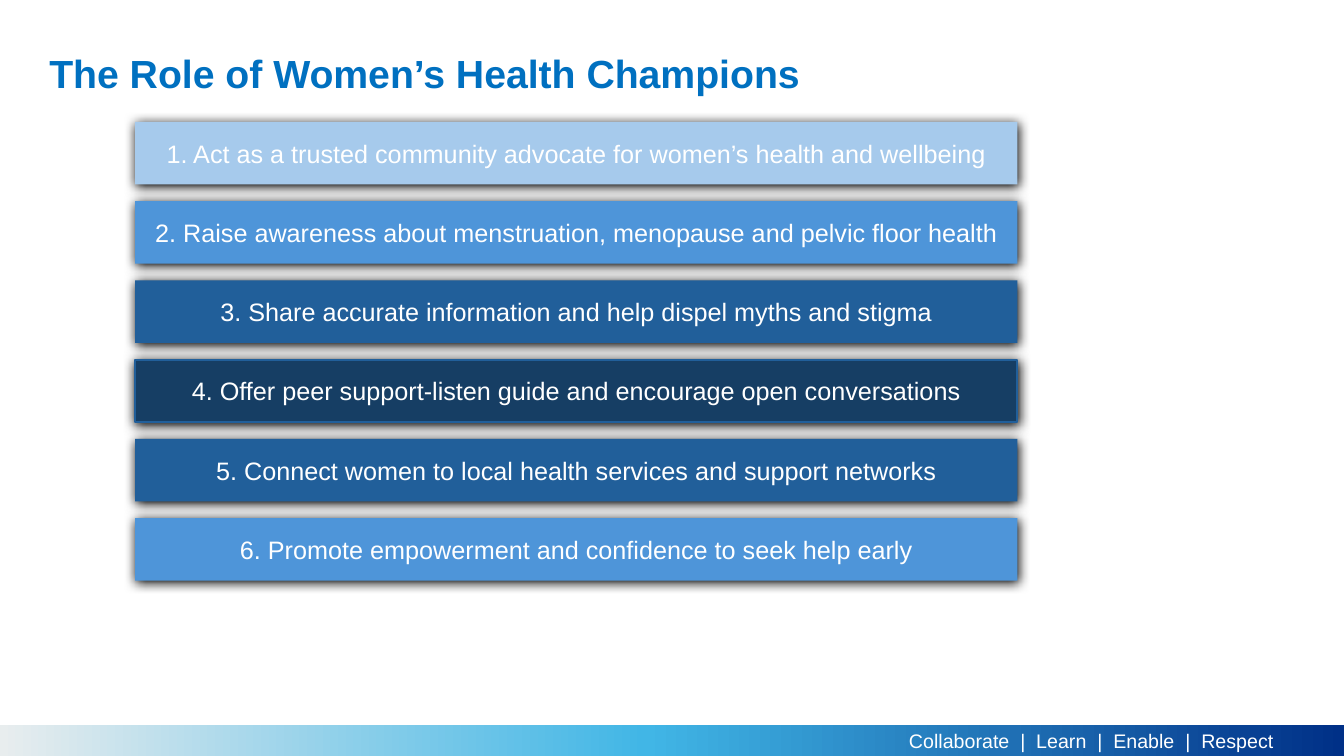
from copy import deepcopy
from dataclasses import dataclass

from lxml import etree
from pptx import Presentation
from pptx import util as u
from pptx.dml.color import RGBColor
from pptx.enum import shapes, text
from pptx.oxml.ns import qn

COLOURS = {
    "title": "0070C0", "white": "FFFFFF", "shadow": "000000",
    "pale": "A6CAEC", "mid": "4E95D9", "deep": "215F9A", "navy": "163E64",
    "band_start": "E8EDEE", "band_middle": "41B6E6", "band_end": "003087",
}
WIDTH, HEIGHT = u.Inches(13.33), u.Inches(7.5)
COLUMN, ROW = WIDTH / 100, HEIGHT / 100  # a grid of 100 columns by 100 rows
BAR_TOP, BAR_PITCH = 16.13, 10.48
BAND_STOPS = [(0, "band_start"), (48, "band_middle"), (100, "band_end")]


@dataclass
class Area:
    left: float
    top: float
    width: float
    height: float

    def lengths(self) -> list[int]:
        return [round(self.left * COLUMN), round(self.top * ROW),
                round(self.width * COLUMN), round(self.height * ROW)]


@dataclass
class Role:
    wording: str
    fill: str
    outline: str | None = None


ROLES = [
    Role("1. Act as a trusted community advocate for women’s health and wellbeing", "pale"),
    Role("2. Raise awareness about menstruation, menopause and pelvic floor health", "mid"),
    Role("3. Share accurate information and help dispel myths and stigma", "deep"),
    Role("4. Offer peer support-listen guide and encourage open conversations", "navy", "deep"),
    Role("5. Connect women to local health services and support networks", "deep"),
    Role("6. Promote empowerment and confidence to seek help early", "mid"),
]


def colour(name: str) -> RGBColor:
    return RGBColor.from_string(COLOURS[name])


def write(box, wording: str, ink: str, font: dict, frame: dict, paragraph: dict) -> None:
    para = box.text_frame.paragraphs[0]
    span = para.add_run()
    span.text = wording
    span.font.color.rgb = colour(ink)
    formats = [(span.font, {"name": "Arial", **font}),
               (box.text_frame, {"word_wrap": True, **frame}),
               (para, paragraph)]
    for target, values in formats:
        for key, value in values.items():
            setattr(target, key, value)


def add_rectangle(page, area: Area):
    box = page.shapes.add_shape(shapes.MSO_SHAPE.RECTANGLE, *area.lengths())
    box.shadow.inherit = False
    box.line.fill.background()
    return box


def add_shadow(box) -> None:
    effects = box._element.spPr.find(qn("a:effectLst"))
    shadow = etree.SubElement(effects, qn("a:outerShdw"), {
        "blurRad": str(u.Pt(8.5)), "dist": str(u.Pt(1)),
        "dir": "5400000", "algn": "t", "rotWithShape": "0"})
    etree.SubElement(shadow, qn("a:srgbClr"), val=COLOURS["shadow"])


def add_band(page, area: Area) -> None:
    band = add_rectangle(page, area)
    band.fill.gradient()
    band.fill.gradient_angle = 0
    stop_list = next(band._element.spPr.iter(qn("a:gsLst")))
    stop_list.insert(1, deepcopy(stop_list[0]))
    for stop, (position, name) in zip(band.fill.gradient_stops, BAND_STOPS):
        stop.position = position / 100
        stop.color.rgb = colour(name)


def add_role(page, index: int, role: Role) -> None:
    bar = add_rectangle(page, Area(10.05, BAR_TOP + index * BAR_PITCH, 65.64, 8.27))
    bar.fill.solid()
    bar.fill.fore_color.rgb = colour(role.fill)
    if role.outline:
        bar.line.color.rgb = colour(role.outline)
        bar.line.width = u.Pt(1.5)
    add_shadow(bar)
    write(bar, role.wording, "white", {"size": u.Pt(18)},
          {"vertical_anchor": text.MSO_ANCHOR.MIDDLE},
          {"alignment": text.PP_ALIGN.CENTER})


def main() -> None:
    deck = Presentation()
    deck.slide_width, deck.slide_height = WIDTH, HEIGHT
    page = deck.slides.add_slide(deck.slide_layouts[6])

    # Footer band and values
    add_band(page, Area(0, 95.87, 100, 4.13))
    footer = page.shapes.add_textbox(*Area(64.22, 95.73, 33.98, 4.53).lengths())
    write(footer, "Collaborate  |  Learn  |  Enable  |  Respect", "white",
          {"size": u.Pt(14)}, {"auto_size": text.MSO_AUTO_SIZE.SHAPE_TO_FIT_TEXT},
          {"alignment": text.PP_ALIGN.CENTER})

    # Title
    title = page.shapes.add_textbox(*Area(2.93, 5.33, 86.27, 9.33).lengths())
    write(title, "The Role of Women’s Health Champions", "title",
          {"size": u.Pt(28), "bold": True},
          {"vertical_anchor": text.MSO_ANCHOR.MIDDLE}, {"line_spacing": 0.9})

    # Champion roles
    for index, role in enumerate(ROLES):
        add_role(page, index, role)

    deck.save("out.pptx")


if __name__ == "__main__":
    main()
